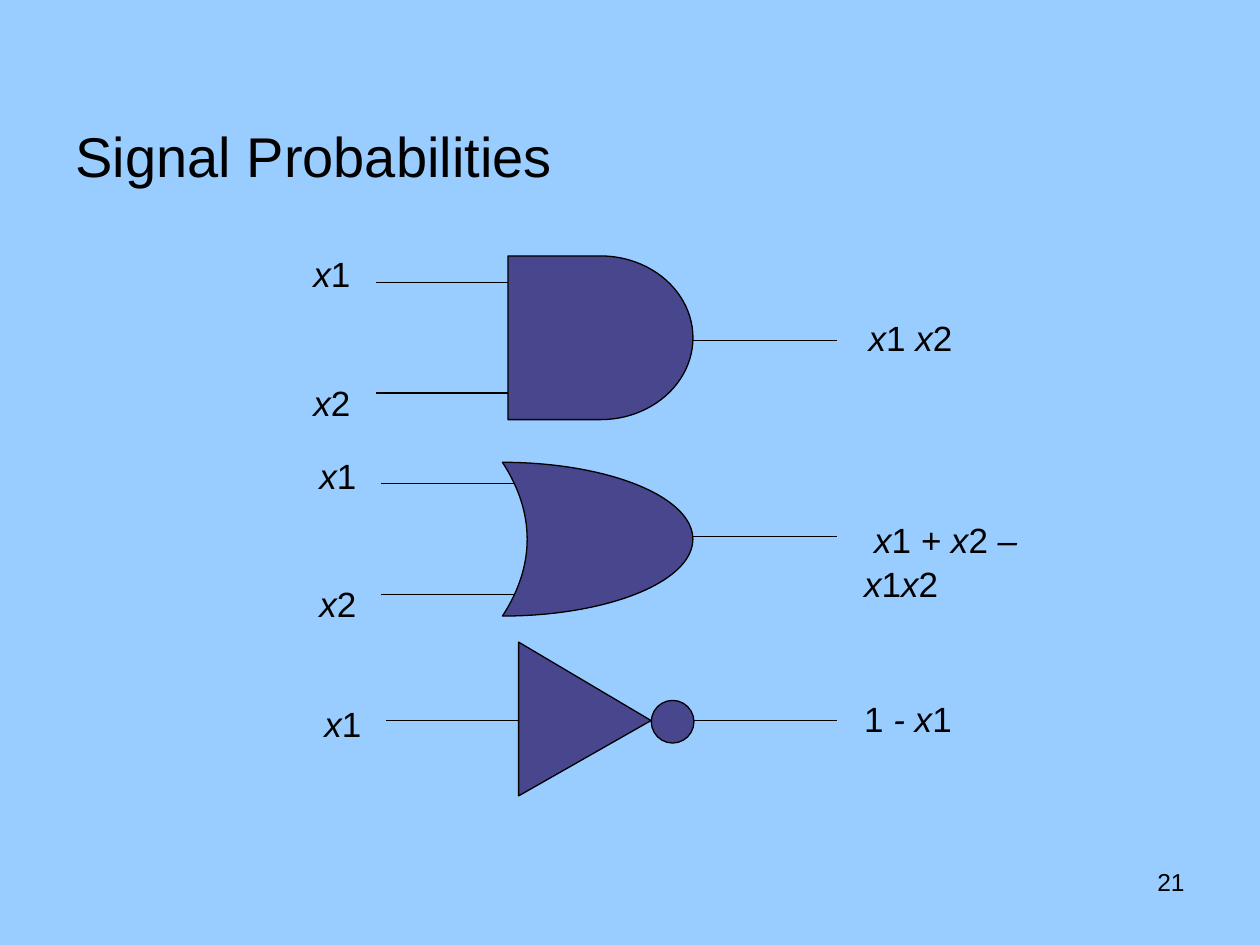
from itertools import groupby
from lxml import etree
from pptx import Presentation
from pptx.dml.color import RGBColor
from pptx.enum import shapes as sh, text as tx
from pptx.oxml.ns import qn
from pptx.util import Cm, Pt

BACK, INK, FILL = "99CCFF", "000000", "48468C"
KIND = sh.MSO_SHAPE

# kind, box (left, top, width, height), rotation, flip, adjustment
PARTS = [
    (KIND.FLOWCHART_DELAY, (10.24, 5.16, 3.73, 3.3), 0, False, None),
    (KIND.MOON, (10.13, 9.32, 3.84, 3.1), 0, True, 0.87),
    (KIND.ISOSCELES_TRIANGLE, (10.24, 13.16, 3.1, 2.67), 90, False, 0.51),
    (KIND.OVAL, (13.13, 14.12, 0.86, 0.86), 0, False, None),
]
# input names, their top, input wire heights, wire end; output, its place, wire height
GATES = [
    (["x1", "x2"], 4.93, [5.69, 7.92], 10.24, "x1 x2", (17.26, 6.22), 6.86),
    (["x1", "x2"], 8.99, [9.75, 11.99], 10.36, "x1 + x2 – x1x2", (17.17, 10.29), 10.82),
    (["x1"], 14.0, [14.53], 10.46, "1 - x1", (17.17, 13.89), 14.53),
]
WIRE = 2.67
OUT = (13.98, 16.87)
INDENT = 0.2


def color(code):
    return RGBColor.from_string(code)


def write(frame, lines, size=20, align=tx.PP_ALIGN.LEFT, math=False, gap=0, indent=0):
    """Fill a frame; with math on, everything but digits is italic."""
    frame.word_wrap = True
    for i, line in enumerate(lines):
        para = frame.add_paragraph() if i else frame.paragraphs[0]
        para.alignment = align
        if i:
            para.space_before = Pt(gap)
        if math:
            para.line_spacing = 1.05
        if indent:
            para._p.get_or_add_pPr().set("indent", str(Cm(indent)))
        runs = groupby(line, str.isdigit) if math else [(True, line)]
        for digit, chars in runs:
            run = para.add_run()
            run.text = "".join(chars)
            run.font.name = "Arial"
            run.font.size = Pt(size)
            run.font.italic = not digit
            run.font.color.rgb = color(INK)


def label(slide, left, top, width, height, lines, **form):
    box = slide.shapes.add_textbox(Cm(left), Cm(top), Cm(width), Cm(height))
    write(box.text_frame, lines, **form)


def outline(item):
    item.line.color.rgb = color(INK)
    item.line.width = Pt(0.75)


def wire(slide, start, end, y):
    line = slide.shapes.add_connector(
        sh.MSO_CONNECTOR.STRAIGHT, Cm(start), Cm(y), Cm(end), Cm(y))
    outline(line)
    etree.SubElement(line._element.spPr, qn("a:effectLst"))


def part(slide, kind, box, turn, flip, adjust):
    item = slide.shapes.add_shape(kind, *map(Cm, box))
    item.shadow.inherit = False
    item.fill.solid()
    item.fill.fore_color.rgb = color(FILL)
    outline(item)
    item.rotation = turn
    if flip:
        item._element.spPr.find(qn("a:xfrm")).set("flipH", "1")
    if adjust is not None:
        item.adjustments[0] = adjust


def main():
    deck = Presentation()
    deck.slide_width, deck.slide_height = Cm(25.4), Cm(19.05)
    slide = deck.slides.add_slide(deck.slide_layouts[5])
    slide.background.fill.solid()
    slide.background.fill.fore_color.rgb = color(BACK)

    title = slide.shapes.title
    title.left, title.top, title.width, title.height = map(Cm, (1.27, 0.76, 22.86, 3.18))
    title.text_frame.vertical_anchor = tx.MSO_ANCHOR.BOTTOM
    write(title.text_frame, ["Signal Probabilities"], size=32)

    for names, top, rows, end, result, place, y in GATES:
        start = end - WIRE
        for row in rows:
            wire(slide, start, end, row)
        wire(slide, *OUT, y)
        label(slide, start - 1.5, top, 1.4, 1.1 if len(names) == 1 else 3.63,
              names, math=True, gap=48.4)
        wraps = len(result) > 8
        label(slide, *place, 4.2 if wraps else 2.4, 1.95 if wraps else 1.1,
              [result], math=True, indent=INDENT if wraps else 0)
    for item in PARTS:
        part(slide, *item)

    label(slide, 18.21, 17.35, 5.92, 1.32, ["21"], size=14, align=tx.PP_ALIGN.RIGHT)
    deck.save("out.pptx")


if __name__ == "__main__":
    main()
